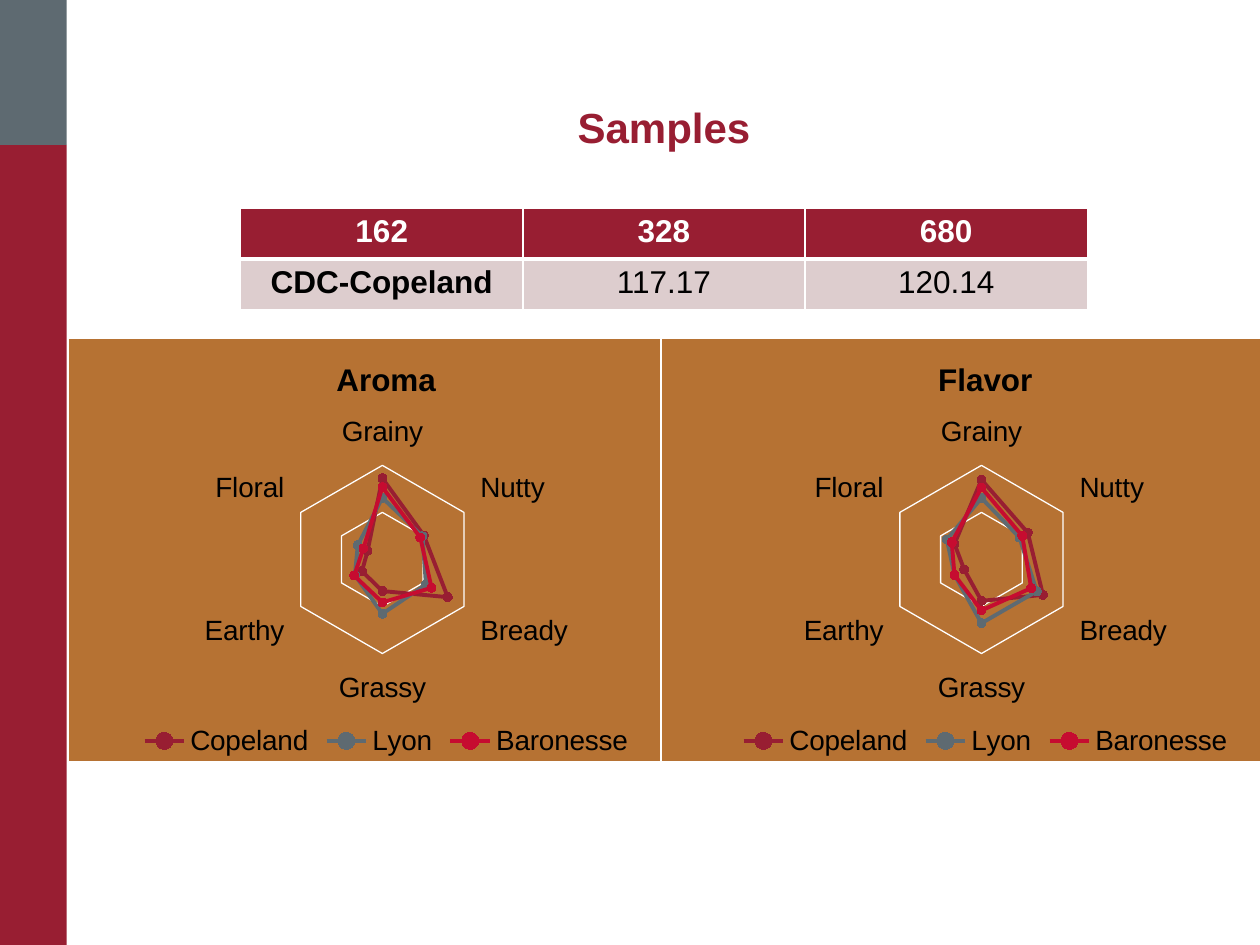
"""Build the Samples slide with a sample table and two radar charts."""
from lxml.etree import SubElement
from pptx import Presentation
from pptx.chart.data import CategoryChartData
from pptx.dml.color import RGBColor
from pptx.enum.chart import XL_CHART_TYPE, XL_LEGEND_POSITION, XL_MARKER_STYLE, XL_TICK_MARK
from pptx.enum.shapes import MSO_SHAPE
from pptx.enum.text import MSO_ANCHOR, PP_ALIGN
from pptx.oxml import parse_xml
from pptx.oxml.ns import nsdecls, qn
from pptx.util import Inches, Pt

CRIMSON = RGBColor(0x98, 0x1E, 0x32)
GRAY = RGBColor(0x5E, 0x6A, 0x71)
RED = RGBColor(0xC6, 0x0C, 0x30)
BROWN = RGBColor(0xB6, 0x72, 0x33)
PINK = RGBColor(0xDD, 0xCD, 0xCE)
WHITE = RGBColor(0xFF, 0xFF, 0xFF)
BLACK = RGBColor(0, 0, 0)
FONT = "Arial"

SIDE_BARS = [(1.15, 6.35, CRIMSON), (0, 1.15, GRAY)]
TABLE_ROWS = [["162", "328", "680"], ["CDC-Copeland", "117.17", "120.14"]]
CATEGORIES = ["Grainy", "Nutty", "Bready", "Grassy", "Earthy", "Floral"]
SERIES_COLORS = {"Copeland": CRIMSON, "Lyon": GRAY, "Baronesse": RED}
CHARTS = [
    {"title": "Aroma", "left": 0.54, "width": 5.05, "maximum": 116,
     "values": [[100, 59, 93, 39, 29, 21], [76, 57, 62, 67, 39, 35], [89, 54, 70, 53, 40, 27]]},
    {"title": "Flavor", "left": 5.24, "width": 5.16, "maximum": 118,
     "values": [[100, 67, 89, 52, 25, 39], [77, 55, 80, 80, 39, 50], [90, 59, 72, 64, 39, 43]]},
]


def style_font(font, size, color, bold=False):
    font.name = FONT
    font.size = Pt(size)
    font.bold = bold
    font.color.rgb = color


def style_line(line, color, width):
    line.color.rgb = color
    line.width = Pt(width)


def add_run(paragraph, text, size, color, bold):
    paragraph.alignment = PP_ALIGN.CENTER
    run = paragraph.add_run()
    run.text = text
    style_font(run.font, size, color, bold)


def add_side_bar(slide, top, height, color):
    bar = slide.shapes.add_shape(
        MSO_SHAPE.RECTANGLE, Inches(0), Inches(top), Inches(0.53), Inches(height))
    bar.shadow.inherit = False
    bar.fill.solid()
    bar.fill.fore_color.rgb = color
    bar.line.fill.background()


def add_title(slide):
    box = slide.shapes.add_textbox(Inches(0.54), Inches(0.8), Inches(9.46), Inches(0.46))
    frame = box.text_frame
    frame.word_wrap = True
    frame.vertical_anchor = MSO_ANCHOR.BOTTOM
    frame.margin_left = frame.margin_right = Inches(0.5)
    paragraph = frame.paragraphs[0]
    paragraph.line_spacing = 0.9
    add_run(paragraph, "Samples", 24, CRIMSON, True)


def set_borders(cell, widths):
    properties = cell._tc.get_or_add_tcPr()
    for position, (side, width) in enumerate(widths.items()):
        properties.insert(position, parse_xml(
            f'<a:{side} {nsdecls("a")} w="{Pt(width)}"><a:solidFill>'
            f'<a:srgbClr val="{WHITE}"/></a:solidFill></a:{side}>'))


def add_sample_table(slide):
    table = slide.shapes.add_table(
        2, 3, Inches(1.91), Inches(1.65), Inches(6.72), Inches(0.81)).table
    for row_index, texts in enumerate(TABLE_ROWS):
        header = row_index == 0
        for column_index, text in enumerate(texts):
            cell = table.cell(row_index, column_index)
            cell.fill.solid()
            cell.fill.fore_color.rgb = CRIMSON if header else PINK
            set_borders(cell, {"lnL": 1, "lnR": 1, "lnT": 1 if header else 3,
                               "lnB": 3 if header else 1})
            add_run(cell.text_frame.paragraphs[0], text, 18,
                    WHITE if header else BLACK, header or column_index == 0)


def fill_chart_area(chart):
    chart_space = chart._chartSpace
    area = parse_xml(
        f'<c:spPr {nsdecls("c", "a")}><a:solidFill><a:srgbClr val="{BROWN}"/></a:solidFill>'
        f'<a:ln w="{Pt(0.75)}"><a:solidFill><a:srgbClr val="{WHITE}"/></a:solidFill></a:ln></c:spPr>')
    chart_space.find(qn("c:chart")).addnext(area)
    if chart_space.find(qn("c:roundedCorners")) is None:
        corners = SubElement(chart_space, qn("c:roundedCorners"))
        corners.set("val", "0")
        chart_space.find(qn("c:date1904")).addnext(corners)


def add_radar_chart(slide, title, left, width, maximum, values):
    data = CategoryChartData()
    data.categories = CATEGORIES
    for name, numbers in zip(SERIES_COLORS, values):
        data.add_series(name, numbers)
    chart = slide.shapes.add_chart(
        XL_CHART_TYPE.RADAR_MARKERS, Inches(left), Inches(2.68),
        Inches(width), Inches(3.37), data).chart
    fill_chart_area(chart)
    style_font(chart.font, 10, BLACK)

    chart.has_title = True
    add_run(chart.chart_title.text_frame.paragraphs[0], title, 18, BLACK, True)
    chart.chart_title.include_in_layout = False
    chart.has_legend = True
    chart.legend.position = XL_LEGEND_POSITION.BOTTOM
    chart.legend.include_in_layout = False
    style_font(chart.legend.font, 16, BLACK)

    category_axis = chart.category_axis
    category_axis.has_major_gridlines = False
    category_axis.major_tick_mark = XL_TICK_MARK.NONE
    style_font(category_axis.tick_labels.font, 16, BLACK)
    style_line(category_axis.format.line, WHITE, 0.75)
    value_axis = chart.value_axis
    value_axis.minimum_scale = 0
    value_axis.maximum_scale = maximum
    value_axis.major_unit = maximum / 2
    value_axis.has_major_gridlines = True
    style_line(value_axis.major_gridlines.format.line, WHITE, 0.75)
    value_axis.visible = False

    chart.plots[0].vary_by_categories = False
    for series, color in zip(chart.plots[0].series, SERIES_COLORS.values()):
        series.smooth = False
        style_line(series.format.line, color, 2.25)
        marker = series.marker
        marker.style = XL_MARKER_STYLE.CIRCLE
        marker.size = 5
        marker.format.fill.solid()
        marker.format.fill.fore_color.rgb = color
        style_line(marker.format.line, color, 0.75)


def main():
    presentation = Presentation()
    presentation.slide_width = Inches(10)
    presentation.slide_height = Inches(7.5)
    slide = presentation.slides.add_slide(presentation.slide_layouts[6])
    for top, height, color in SIDE_BARS:
        add_side_bar(slide, top, height, color)
    add_title(slide)
    add_sample_table(slide)
    for chart in CHARTS:
        add_radar_chart(slide, **chart)
    presentation.save("out.pptx")


if __name__ == "__main__":
    main()
